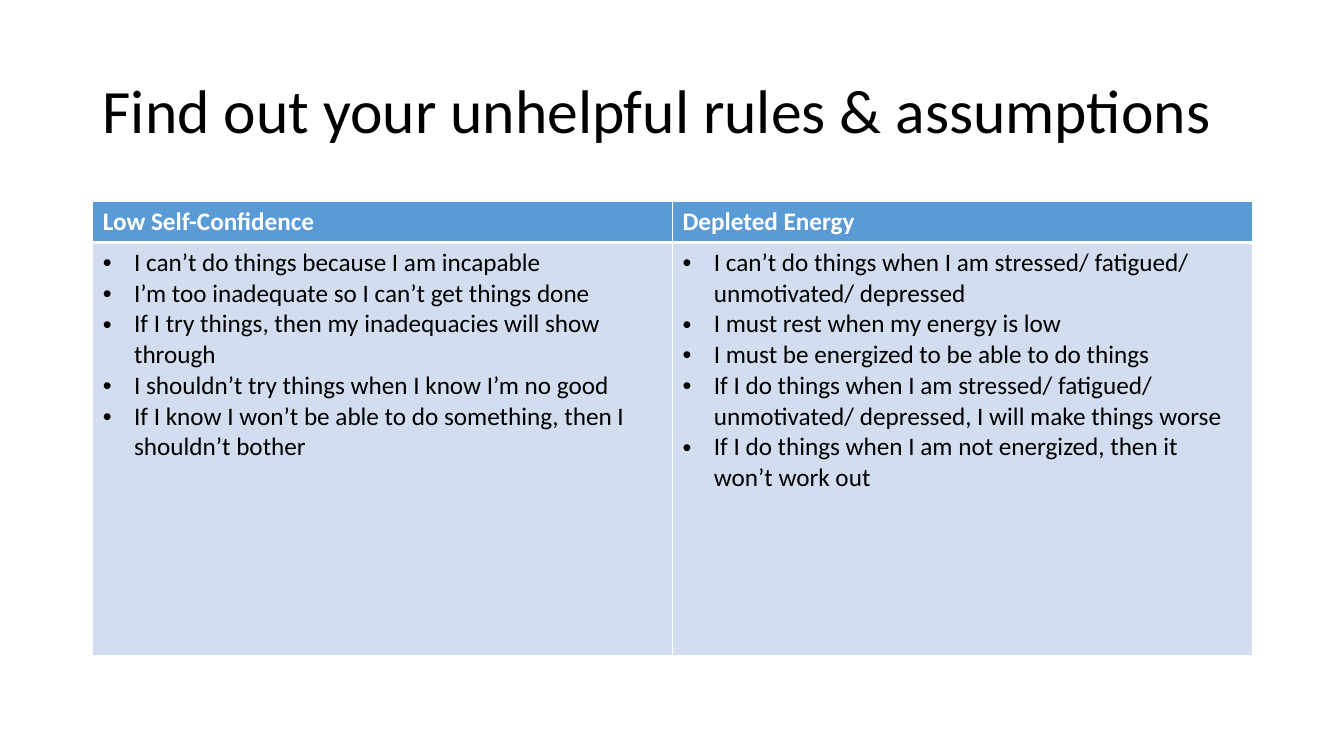
from lxml import etree
from pptx import Presentation
from pptx import util as u
from pptx.dml.color import RGBColor
from pptx.enum import text
from pptx.oxml import ns

WIDTH, HEIGHT = 13.33, 7.5
MARGIN = 0.92
CONTENT_WIDTH = 11.5
TITLE_BOX = (MARGIN, 0.4, CONTENT_WIDTH, 1.45)
TABLE_BOX = (MARGIN, 2, CONTENT_WIDTH, 4.5)
HEADER_SHARE = 0.09
INDENT = 0.31

WHITE, BLACK, HEADER_BLUE, BODY_BLUE = "FFFFFF", "000000", "5B9BD5", "D2DEEF"
TITLE_FONT = {"name": "Calibri", "size": u.Pt(44), "bold": False}
HEADER_FONT = {"name": "Calibri", "size": u.Pt(18), "bold": True}
BODY_FONT = {**HEADER_FONT, "bold": False}
HEADER_BORDERS = {"lnL": 1, "lnR": 1, "lnT": 1, "lnB": 3}
BODY_BORDERS = {"lnL": 1, "lnR": 1, "lnT": 3, "lnB": 1}

TITLE = "Find out your unhelpful rules & assumptions"
RULES = {
    "Low Self-Confidence": [
        "I can’t do things because I am incapable",
        "I’m too inadequate so I can’t get things done",
        "If I try things, then my inadequacies will show through",
        "I shouldn’t try things when I know I’m no good",
        "If I know I won’t be able to do something, then I shouldn’t bother",
    ],
    "Depleted Energy": [
        "I can’t do things when I am stressed/ fatigued/ unmotivated/ depressed",
        "I must rest when my energy is low",
        "I must be energized to be able to do things",
        "If I do things when I am stressed/ fatigued/ unmotivated/ depressed, "
        "I will make things worse",
        "If I do things when I am not energized, then it won’t work out",
    ],
}


def set_color(color_format, color):
    """Apply a hex colour to a font or fill colour."""
    color_format.rgb = RGBColor.from_string(color)


def write_paragraphs(frame, lines, font_format, color):
    """Fill a text frame with one formatted paragraph per line."""
    for index, line in enumerate(lines):
        paragraph = frame.add_paragraph() if index else frame.paragraphs[0]
        run = paragraph.add_run()
        run.text = line
        for name, value in font_format.items():
            setattr(run.font, name, value)
        set_color(run.font.color, color)


def add_bullet(paragraph):
    """Give a paragraph a bullet with a hanging indent."""
    properties = paragraph._p.get_or_add_pPr()
    properties.set("marL", str(u.Inches(INDENT)))
    properties.set("indent", str(-u.Inches(INDENT)))
    etree.SubElement(properties, ns.qn("a:buFont"), typeface="Arial")
    etree.SubElement(properties, ns.qn("a:buChar"), char="•")


def style_cell(cell, color, borders):
    """Draw the white borders of a cell and fill it."""
    properties = cell._tc.get_or_add_tcPr()
    for side, points in borders.items():
        line = etree.SubElement(properties, ns.qn(f"a:{side}"), w=str(u.Pt(points)))
        fill = etree.SubElement(line, ns.qn("a:solidFill"))
        etree.SubElement(fill, ns.qn("a:srgbClr"), val=WHITE)
    cell.fill.solid()
    set_color(cell.fill.fore_color, color)


def add_title(slide, box):
    """Place the title, centred vertically in its box."""
    frame = slide.shapes.add_textbox(*map(u.Inches, box)).text_frame
    frame.word_wrap = True
    frame.vertical_anchor = text.MSO_ANCHOR.MIDDLE
    write_paragraphs(frame, [TITLE], TITLE_FONT, BLACK)
    frame.paragraphs[0].line_spacing = 0.9


def add_rules_table(slide, box):
    """Place the table with one column of rules for each heading."""
    table = slide.shapes.add_table(2, len(RULES), *map(u.Inches, box)).table
    width, height = box[2:]
    for row, share in zip(table.rows, (HEADER_SHARE, 1 - HEADER_SHARE)):
        row.height = u.Inches(height * share)
    for index, (heading, rules) in enumerate(RULES.items()):
        table.columns[index].width = u.Inches(width / len(RULES))
        header, body = table.cell(0, index), table.cell(1, index)
        style_cell(header, HEADER_BLUE, HEADER_BORDERS)
        style_cell(body, BODY_BLUE, BODY_BORDERS)
        write_paragraphs(header.text_frame, [heading], HEADER_FONT, WHITE)
        write_paragraphs(body.text_frame, rules, BODY_FONT, BLACK)
        for paragraph in body.text_frame.paragraphs:
            add_bullet(paragraph)


def main():
    """Build and save the presentation."""
    presentation = Presentation()
    presentation.slide_width = u.Inches(WIDTH)
    presentation.slide_height = u.Inches(HEIGHT)
    slide = presentation.slides.add_slide(presentation.slide_layouts[6])
    add_title(slide, TITLE_BOX)
    add_rules_table(slide, TABLE_BOX)
    presentation.save("out.pptx")


if __name__ == "__main__":
    main()
